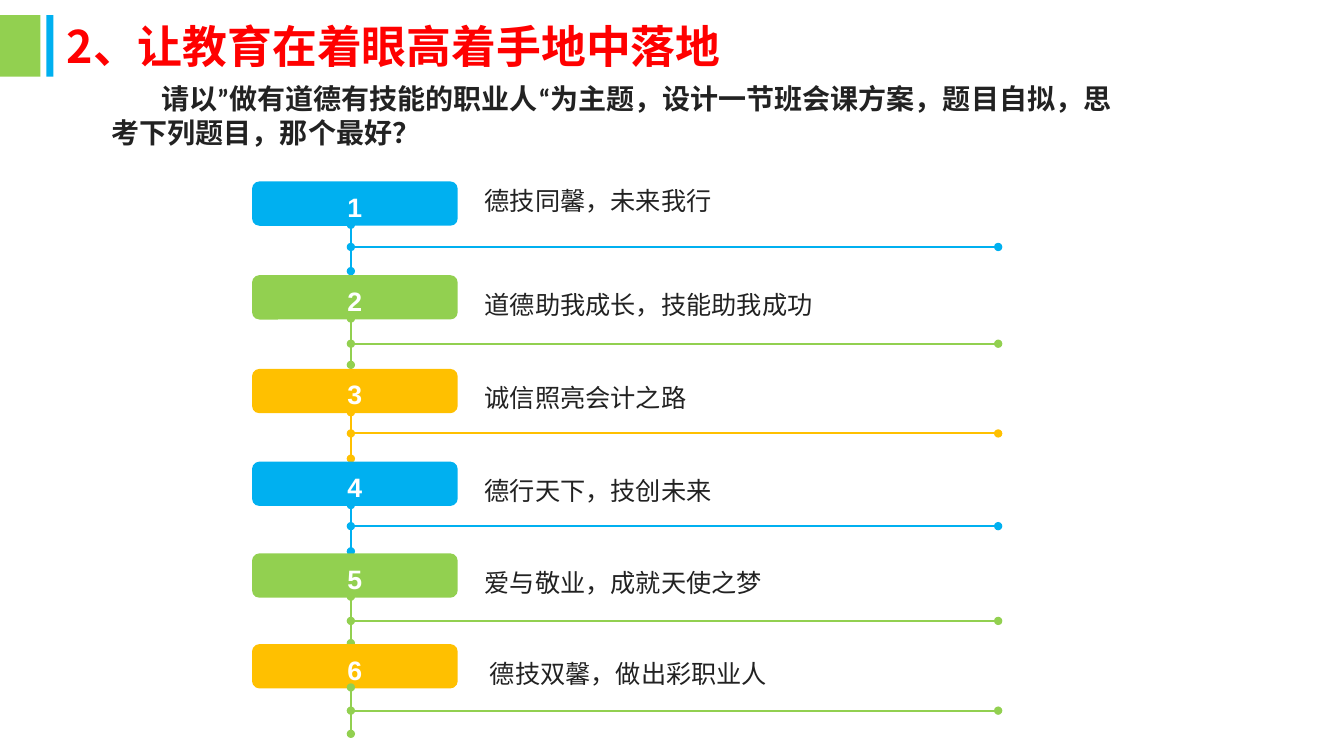
import pptx
import pptx.util
import pptx.dml.color
import pptx.enum.shapes
import pptx.enum.text
import pptx.oxml
import pptx.oxml.ns
from dataclasses import dataclass

Inches = pptx.util.Inches
Pt = pptx.util.Pt
Shapes = pptx.enum.shapes.MSO_SHAPE
Align = pptx.enum.text.PP_ALIGN
Anchor = pptx.enum.text.MSO_ANCHOR


@dataclass(frozen=True)
class Theme:
    blue: str = "00B0F0"
    green: str = "92D050"
    amber: str = "FFC000"
    red: str = "FF0000"
    ink: str = "222222"
    white: str = "FFFFFF"
    heading_font: str = "Noto Sans CJK SC"
    body_font: str = "Calibri"
    number_font: str = "Arial"
    title_size: int = 32
    intro_size: int = 20
    number_size: int = 19
    topic_size: int = 18
    line_width: float = 1.5


class SlideBuilder:
    def __init__(self, presentation, theme):
        self.theme = theme
        self.slide = presentation.slides.add_slide(presentation.slide_layouts[5])

    def set_text(self, shape, text, font, size, color, bold=False, spacing=1.0,
                 align=Align.LEFT, anchor=Anchor.TOP):
        frame = shape.text_frame
        frame.word_wrap = True
        frame.auto_size = pptx.enum.text.MSO_AUTO_SIZE.NONE
        frame.vertical_anchor = anchor
        frame.text = text
        paragraph = frame.paragraphs[0]
        paragraph.alignment = align
        paragraph.line_spacing = spacing
        paragraph.space_before = Pt(0)
        for run in paragraph.runs:
            run.font.name = font
            run.font.size = Pt(size)
            run.font.bold = bold
            run.font.color.rgb = pptx.dml.color.RGBColor.from_string(color)
            east_asian = pptx.oxml.parse_xml(
                f'<a:ea {pptx.oxml.ns.nsdecls("a")} typeface="{font}"/>')
            run.font._element.find(pptx.oxml.ns.qn("a:latin")).addnext(east_asian)
        return paragraph

    def title(self, text, left, top, width, height):
        shape = self.slide.shapes.title
        shape.left, shape.top = Inches(left), Inches(top)
        shape.width, shape.height = Inches(width), Inches(height)
        self.set_text(shape, text, self.theme.heading_font, self.theme.title_size,
                      self.theme.red, bold=True, anchor=Anchor.MIDDLE)

    def block(self, kind, left, top, width, height, color):
        shape = self.slide.shapes.add_shape(
            kind, Inches(left), Inches(top), Inches(width), Inches(height))
        shape.shadow.inherit = False
        shape.fill.solid()
        shape.fill.fore_color.rgb = pptx.dml.color.RGBColor.from_string(color)
        shape.line.fill.background()
        return shape

    def number_card(self, number, left, top, color):
        shape = self.block(Shapes.ROUNDED_RECTANGLE, left, top, 2.04, 0.44, color)
        self.set_text(shape, str(number), self.theme.number_font,
                      self.theme.number_size, self.theme.white, bold=True,
                      spacing=1.2, align=Align.CENTER, anchor=Anchor.MIDDLE)

    def text(self, text, left, top, width, height, font, size, **style):
        shape = self.slide.shapes.add_textbox(
            Inches(left), Inches(top), Inches(width), Inches(height))
        return self.set_text(shape, text, font, size, self.theme.ink, **style)

    def dotted_end_line(self, start_x, start_y, end_x, end_y, color):
        connector = self.slide.shapes.add_connector(
            pptx.enum.shapes.MSO_CONNECTOR.STRAIGHT,
            Inches(start_x), Inches(start_y), Inches(end_x), Inches(end_y))
        connector.line.color.rgb = pptx.dml.color.RGBColor.from_string(color)
        connector.line.width = Pt(self.theme.line_width)
        namespace = pptx.oxml.ns.nsdecls("a")
        properties = connector._element.spPr
        outline = properties.find(pptx.oxml.ns.qn("a:ln"))
        for end in ("headEnd", "tailEnd"):
            outline.append(pptx.oxml.parse_xml(f'<a:{end} {namespace} type="oval"/>'))
        properties.append(pptx.oxml.parse_xml(f"<a:effectLst {namespace}/>"))


def main():
    theme = Theme()
    presentation = pptx.Presentation()
    presentation.slide_width = Inches(13.33)
    presentation.slide_height = Inches(7.5)
    builder = SlideBuilder(presentation, theme)

    builder.block(Shapes.RECTANGLE, 0, 0.15, 0.4, 0.61, theme.green)
    builder.block(Shapes.RECTANGLE, 0.46, 0.15, 0.07, 0.61, theme.blue)
    builder.title("2、让教育在着眼高着手地中落地", 0.56, 0.15, 7.41, 0.61)
    intro = builder.text(
        "请以”做有道德有技能的职业人“为主题，设计一节班会课方案，题目自拟，思考下列题目，那个最好？",
        1.01, 0.76, 10.16, 0.77, theme.body_font, theme.intro_size, bold=True)
    intro._p.get_or_add_pPr().set("indent", str(Inches(0.49)))

    topics = [
        ("德技同馨，未来我行", 1.8, 4.71, 1.7, 2.45, theme.blue, theme.blue),
        ("道德助我成长，技能助我成功", 2.73, 4.71, 2.73, 3.41, theme.green, theme.green),
        ("诚信照亮会计之路", 3.66, 4.71, 3.65, 4.3, theme.amber, theme.amber),
        ("德行天下，技创未来", 4.58, 4.71, 4.58, 5.22, theme.blue, theme.blue),
        ("爱与敬业，成就天使之梦", 5.49, 4.71, 5.49, 6.16, theme.green, theme.green),
        ("德技双馨，做出彩职业人", 6.39, 4.76, 6.39, 7.05, theme.amber, theme.green),
    ]
    stem_x = 3.48
    for number, topic in enumerate(topics, start=1):
        text, card_top, text_left, text_top, rule_y, card_color, line_color = topic
        stem_top = card_top + 0.43
        builder.number_card(number, 2.5, card_top, card_color)
        builder.dotted_end_line(stem_x, stem_top, stem_x, stem_top + 0.46, line_color)
        builder.dotted_end_line(9.9, rule_y, stem_x, rule_y, line_color)
        builder.text(text, text_left, text_top, 4.63, 0.55, theme.heading_font,
                     theme.topic_size, spacing=1.3)

    presentation.save("out.pptx")


if __name__ == "__main__":
    main()
